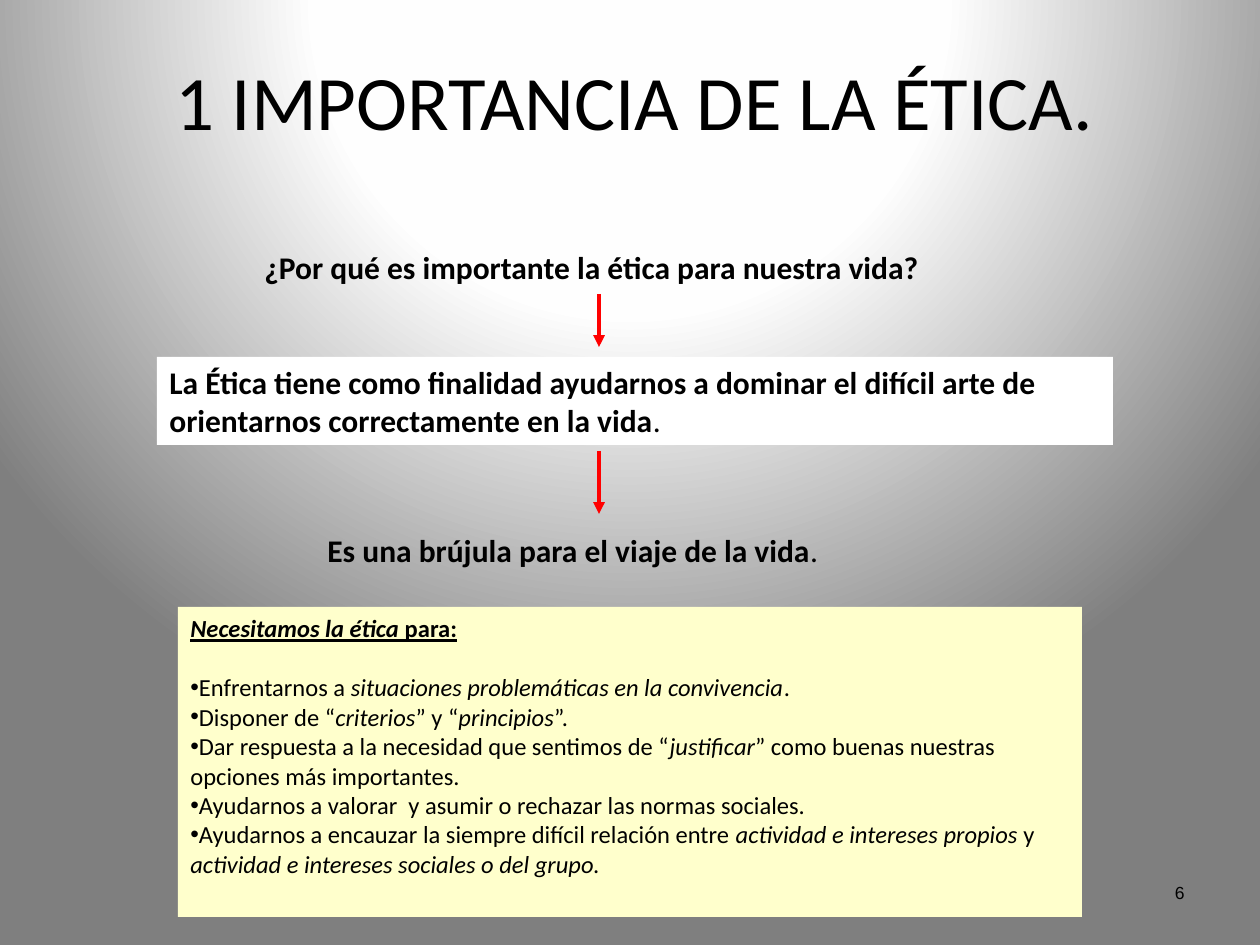
"""Build a slide on the importance of ethics, with a short flow and a list of reasons."""
from dataclasses import dataclass

from lxml.etree import SubElement
from pptx import Presentation
from pptx.dml.color import RGBColor
from pptx.enum.shapes import MSO_CONNECTOR, MSO_SHAPE
from pptx.enum.text import MSO_ANCHOR, PP_ALIGN
from pptx.oxml.ns import qn
from pptx.util import Emu, Pt

PX_PER_INCH = 126


@dataclass(frozen=True)
class Theme:
    """Colours, fonts and type sizes of the slide."""
    ink: str = "000000"
    panel: str = "FFFFFF"
    note: str = "FFFFCC"
    arrow: str = "FF0000"
    glow: tuple = ((0, "FFFFFF"), (40, "FEFEFE"), (100, "7F7F7F"))
    font: str = "Calibri"
    number_font: str = "Arial"
    title_size: int = 44
    flow_size: int = 18
    note_size: int = 14
    number_size: int = 10
    note_gap: int = 17
    arrow_width: float = 2.25


THEME = Theme()
ARROW_X = 599
ARROWS = [(294, 347), (451, 514)]
FLOW = [
    ((252, 242, 781, 50), None, [("¿Por qué es importante la ética para nuestra vida?", "b")]),
    ((157, 357, 956, 88), THEME.panel,
     [("La Ética tiene como finalidad ayudarnos a dominar el difícil arte de "
       "orientarnos correctamente en la vida", "b"), (".", "")]),
    ((315, 525, 601, 50), None, [("Es una brújula para el viaje de la vida", "b"), (".", "")]),
]
NOTE_HEADING = [("Necesitamos la ética", "biu"), (" para:", "bu")]
REASONS = [
    [("Enfrentarnos a", ""), (" situaciones problemáticas en la convivencia", "i"), (".", "")],
    [("Disponer de “", ""), ("criterios", "i"), ("” y “", ""), ("principios", "i"), ("”.", "")],
    [("Dar respuesta a la necesidad que sentimos de “", ""), ("justificar", "i"),
     ("” como buenas nuestras opciones más importantes.", "")],
    [("Ayudarnos a valorar  y asumir o rechazar las normas sociales.", "")],
    [("Ayudarnos a encauzar la siempre difícil relación entre ", ""),
     ("actividad e intereses propios", "i"), (" y ", ""),
     ("actividad e intereses sociales o del grupo.", "i")],
]


def px(length):
    """Turn pixels into EMU."""
    return Emu(round(length * 914400 / PX_PER_INCH))


def paint_background(page):
    """Fill the page with a circular gradient centred above its middle."""
    page.background.fill.solid()
    holder = page.element.find(".//" + qn("p:bgPr"))
    holder.remove(holder.find(qn("a:solidFill")))
    gradient = holder.makeelement(qn("a:gradFill"), {"rotWithShape": "1"})
    holder.insert(0, gradient)
    stops = SubElement(gradient, qn("a:gsLst"))
    for position, colour in THEME.glow:
        stop = SubElement(stops, qn("a:gs"), pos=str(position * 1000))
        SubElement(stop, qn("a:srgbClr"), val=colour)
    shade = SubElement(gradient, qn("a:path"), {"path": "circle"})
    SubElement(shade, qn("a:fillToRect"), l="50000", t="-80000", r="50000", b="180000")


def add_box(page, bounds, fill=None, anchor=MSO_ANCHOR.TOP):
    """Add a text box, or a filled rectangle, and return its text frame."""
    place = [px(length) for length in bounds]
    if fill:
        box = page.shapes.add_shape(MSO_SHAPE.RECTANGLE, *place)
        box.shadow.inherit = False
        box.fill.solid()
        box.fill.fore_color.rgb = RGBColor.from_string(fill)
        box.line.fill.background()
    else:
        box = page.shapes.add_textbox(*place)
    box.text_frame.word_wrap = True
    box.text_frame.vertical_anchor = anchor
    return box.text_frame


def write(para, spans, size, font=THEME.font, align=PP_ALIGN.LEFT):
    """Write styled spans into a paragraph; b, i and u mark the styles."""
    para.alignment = align
    for text, style in spans:
        span = para.add_run()
        span.text = text
        span.font.name = font
        span.font.size = Pt(size)
        span.font.color.rgb = RGBColor.from_string(THEME.ink)
        span.font.bold = "b" in style
        span.font.italic = "i" in style
        span.font.underline = "u" in style


def add_bullet(para):
    """Give a paragraph a round bullet without indent."""
    properties = para._p.get_or_add_pPr()
    SubElement(properties, qn("a:buFont"), typeface=THEME.number_font)
    SubElement(properties, qn("a:buChar"), char="•")


def add_arrow(page, top, bottom):
    """Add a downward arrow on the axis of the flow."""
    arrow = page.shapes.add_connector(
        MSO_CONNECTOR.STRAIGHT, px(ARROW_X), px(top), px(ARROW_X), px(bottom))
    arrow.line.color.rgb = RGBColor.from_string(THEME.arrow)
    arrow.line.width = Pt(THEME.arrow_width)
    SubElement(arrow.line._get_or_add_ln(), qn("a:tailEnd"), type="triangle")
    SubElement(arrow._element.spPr, qn("a:effectLst"))


def add_note(page):
    """Add the panel that lists the reasons."""
    frame = add_box(page, (178, 607, 904, 310), THEME.note)
    write(frame.paragraphs[0], NOTE_HEADING, THEME.note_size)
    frame.paragraphs[0].space_after = Pt(THEME.note_gap)
    for reason in REASONS:
        para = frame.add_paragraph()
        write(para, reason, THEME.note_size)
        add_bullet(para)


def main():
    """Build and save the deck."""
    deck = Presentation()
    deck.slide_width, deck.slide_height = px(1260), px(945)
    page = deck.slides.add_slide(deck.slide_layouts[6])
    paint_background(page)
    title = add_box(page, (151, 21, 968, 158), anchor=MSO_ANCHOR.MIDDLE)
    write(title.paragraphs[0], [("1 IMPORTANCIA DE LA ÉTICA.", "")],
          THEME.title_size, align=PP_ALIGN.CENTER)
    number = add_box(page, (903, 876, 294, 50))
    write(number.paragraphs[0], [("6", "")], THEME.number_size,
          THEME.number_font, PP_ALIGN.RIGHT)
    for bounds, fill, spans in FLOW:
        frame = add_box(page, bounds, fill, MSO_ANCHOR.MIDDLE)
        write(frame.paragraphs[0], spans, THEME.flow_size)
    for top, bottom in ARROWS:
        add_arrow(page, top, bottom)
    add_note(page)
    deck.save("out.pptx")


if __name__ == "__main__":
    main()
